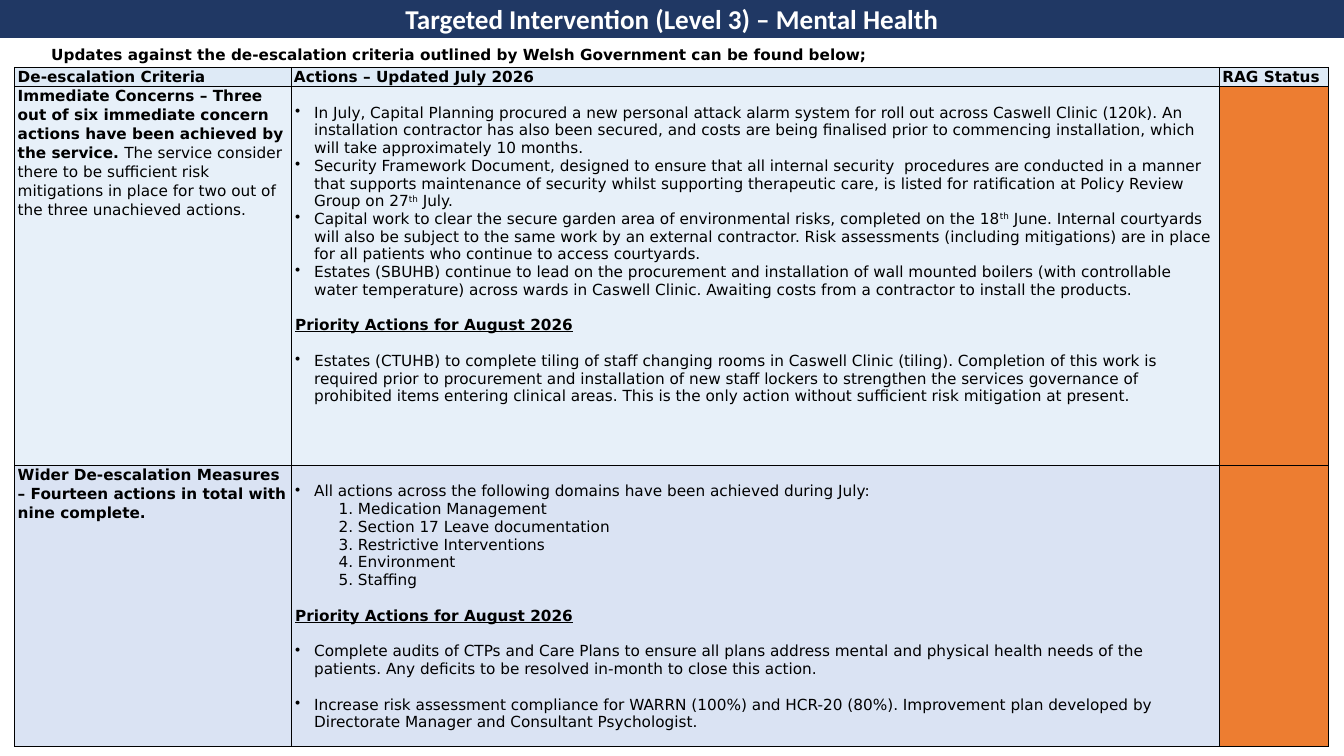
from dataclasses import dataclass
from enum import Enum

from lxml.etree import SubElement
from pptx import Presentation
from pptx.dml.color import RGBColor
from pptx.enum.shapes import MSO_SHAPE as Shape
from pptx.enum.text import MSO_ANCHOR as Anchor, PP_ALIGN as Align
from pptx.oxml.ns import qn
from pptx.util import Pt

PX = 9144
NAVY = RGBColor(0x20, 0x38, 0x64)
WHITE = RGBColor(0xFF, 0xFF, 0xFF)
BLACK = RGBColor(0x00, 0x00, 0x00)
HEADER_BLUE = RGBColor(0xDE, 0xEA, 0xF6)
PALE_BLUE = RGBColor(0xE7, 0xF0, 0xF9)
SOFT_BLUE = RGBColor(0xDA, 0xE3, 0xF3)
AMBER = RGBColor(0xED, 0x7D, 0x31)
BODY_FONT, TITLE_FONT = "DejaVu Sans", "Calibri"
LINE_GAP = 21
COLUMNS = (452, 1519, 179)
HEADERS = ("De-escalation Criteria", "Actions – Updated July 2026", "RAG Status")


class Kind(Enum):
    PLAIN = (0, 0)
    BULLET = (31, -31)
    DOMAIN = (71, 0)
    INTRO = (25, 0)


@dataclass(frozen=True)
class Span:
    text: str
    bold: bool = False
    underline: bool = False
    raised: bool = False


@dataclass(frozen=True)
class Entry:
    spans: tuple[Span, ...]
    kind: Kind = Kind.PLAIN
    gap: int = 0
    spacing: float = 1.0


@dataclass(frozen=True)
class Measure:
    criterion: Entry
    actions: tuple[Entry, ...]
    height: int
    fill: RGBColor


def bullet(*parts: str, gap: int = 0) -> Entry:
    """Make a bullet whose every second part is superscript."""
    spans = tuple(Span(part, raised=index % 2 == 1) for index, part in enumerate(parts))
    return Entry(spans, Kind.BULLET, gap)


def label(text: str, kind: Kind = Kind.PLAIN, rest: str = "") -> Entry:
    """Make a bold entry with an optional regular ending."""
    spans = (Span(text, bold=True),) + ((Span(rest),) if rest else ())
    return Entry(spans, kind, spacing=1.07)


PRIORITY = Entry((Span("Priority Actions for August 2026", True, True),), gap=LINE_GAP)
DOMAINS = ("Medication Management", "Section 17 Leave documentation",
           "Restrictive Interventions", "Environment", "Staffing")
MEASURES = (
    Measure(
        label("Immediate Concerns – Three out of six immediate concern actions have been "
              "achieved by the service. ",
              rest="The service consider there to be sufficient risk mitigations in place "
                   "for two out of the three unachieved actions."),
        (
            bullet("In July, Capital Planning procured a new personal attack alarm system for "
                   "roll out across Caswell Clinic (120k). An installation contractor has also "
                   "been secured, and costs are being finalised prior to commencing "
                   "installation, which will take approximately 10 months."),
            bullet("Security Framework Document, designed to ensure that all internal security  "
                   "procedures are conducted in a manner that supports maintenance of security "
                   "whilst supporting therapeutic care, is listed for ratification at Policy "
                   "Review Group on 27", "th", " July."),
            bullet("Capital work to clear the secure garden area of environmental risks, "
                   "completed on the 18", "th", " June. Internal courtyards will also be subject "
                   "to the same work by an external contractor. Risk assessments (including "
                   "mitigations) are in place for all patients who continue to access "
                   "courtyards."),
            bullet("Estates (SBUHB) continue to lead on the procurement and installation of wall "
                   "mounted boilers (with controllable water temperature) across wards in "
                   "Caswell Clinic. Awaiting costs from a contractor to install the products."),
            PRIORITY,
            bullet("Estates (CTUHB) to complete tiling of staff changing rooms in Caswell Clinic "
                   "(tiling). Completion of this work is required prior to procurement and "
                   "installation of new staff lockers to strengthen the services governance of "
                   "prohibited items entering clinical areas. This is the only action without "
                   "sufficient risk mitigation at present.", gap=LINE_GAP),
        ),
        620, PALE_BLUE),
    Measure(
        label("Wider De-escalation Measures – Fourteen actions in total with nine complete."),
        (
            bullet("All actions across the following domains have been achieved during July:"),
            *(Entry((Span(f"{number}. {domain}"),), Kind.DOMAIN)
              for number, domain in enumerate(DOMAINS, 1)),
            PRIORITY,
            bullet("Complete audits of CTPs and Care Plans to ensure all plans address mental and "
                   "physical health needs of the patients. Any deficits to be resolved in-month "
                   "to close this action.", gap=LINE_GAP),
            bullet("Increase risk assessment compliance for WARRN (100%) and HCR-20 (80%). "
                   "Improvement plan developed by Directorate Manager and Consultant "
                   "Psychologist.", gap=LINE_GAP),
        ),
        460, SOFT_BLUE),
)


def write_entries(frame, entries: tuple[Entry, ...]) -> None:
    """Write the entries as paragraphs of a text frame."""
    for index, entry in enumerate(entries):
        para = frame.add_paragraph() if index else frame.paragraphs[0]
        left, indent = entry.kind.value
        properties = para._p.get_or_add_pPr()
        properties.set("marL", str(left * PX))
        properties.set("indent", str(indent * PX))
        if entry.kind is Kind.BULLET:
            SubElement(properties, qn("a:buChar")).set("char", "•")
        para.line_spacing = entry.spacing
        para.space_before = Pt(entry.gap)
        for span in entry.spans:
            run = para.add_run()
            run.text = span.text
            run.font.name, run.font.size = BODY_FONT, Pt(18)
            run.font.color.rgb = BLACK
            run.font.bold, run.font.underline = span.bold, span.underline
            if span.raised:
                run._r.get_or_add_rPr().set("baseline", "30000")


def style_cell(cell, fill: RGBColor, side: int = 5, top: int = 0) -> None:
    """Give a cell its borders, fill and margins."""
    properties = cell._tc.get_or_add_tcPr()
    for edge in ("lnL", "lnR", "lnT", "lnB"):
        line = SubElement(properties, qn(f"a:{edge}"), w=str(Pt(1)))
        paint = SubElement(line, qn("a:solidFill"))
        SubElement(paint, qn("a:srgbClr"), val=str(BLACK))
    cell.fill.solid()
    cell.fill.fore_color.rgb = fill
    cell.margin_left = cell.margin_right = side * PX
    cell.margin_top, cell.margin_bottom = top * PX, 0


def add_title(page) -> None:
    """Draw the title band."""
    band = page.shapes.add_shape(Shape.RECTANGLE, 0, -2 * PX, 2199 * PX, 64 * PX)
    band.shadow.inherit = False
    band.fill.solid()
    band.fill.fore_color.rgb = NAVY
    band.line.fill.background()
    band.text_frame.text = "Targeted Intervention (Level 3) – Mental Health"
    band.text_frame.vertical_anchor = Anchor.MIDDLE
    para = band.text_frame.paragraphs[0]
    para.alignment = Align.CENTER
    font = para.runs[0].font
    font.name, font.size, font.bold = TITLE_FONT, Pt(32), True
    font.color.rgb = WHITE


def add_measures(page) -> None:
    """Draw the table of de-escalation measures."""
    heights = (29, *(measure.height for measure in MEASURES))
    table = page.shapes.add_table(len(heights), len(COLUMNS), 24 * PX, 110 * PX,
                                  sum(COLUMNS) * PX, sum(heights) * PX).table
    table.first_row = table.horz_banding = False
    for column, width in zip(table.columns, COLUMNS):
        column.width = width * PX
    for row, height in zip(table.rows, heights):
        row.height = height * PX
    for index, header in enumerate(HEADERS):
        cell = table.cell(0, index)
        style_cell(cell, HEADER_BLUE)
        write_entries(cell.text_frame, (label(header),))
    for index, measure in enumerate(MEASURES, 1):
        criterion, actions, status = (table.cell(index, place) for place in range(3))
        style_cell(criterion, measure.fill)
        write_entries(criterion.text_frame, (measure.criterion,))
        style_cell(actions, measure.fill, side=7, top=29)
        write_entries(actions.text_frame, measure.actions)
        style_cell(status, AMBER)


def main() -> None:
    """Build the slide and save it."""
    deck = Presentation()
    deck.slide_width, deck.slide_height = 2199 * PX, 1237 * PX
    page = deck.slides.add_slide(deck.slide_layouts[6])
    add_title(page)
    add_measures(page)
    box = page.shapes.add_textbox(49 * PX, 67 * PX, 1533 * PX, 41 * PX)
    box.text_frame.word_wrap = True
    intro = ("Updates against the de-escalation criteria outlined by Welsh Government "
             "can be found below;")
    write_entries(box.text_frame, (label(intro, Kind.INTRO),))
    deck.save("out.pptx")


if __name__ == "__main__":
    main()
